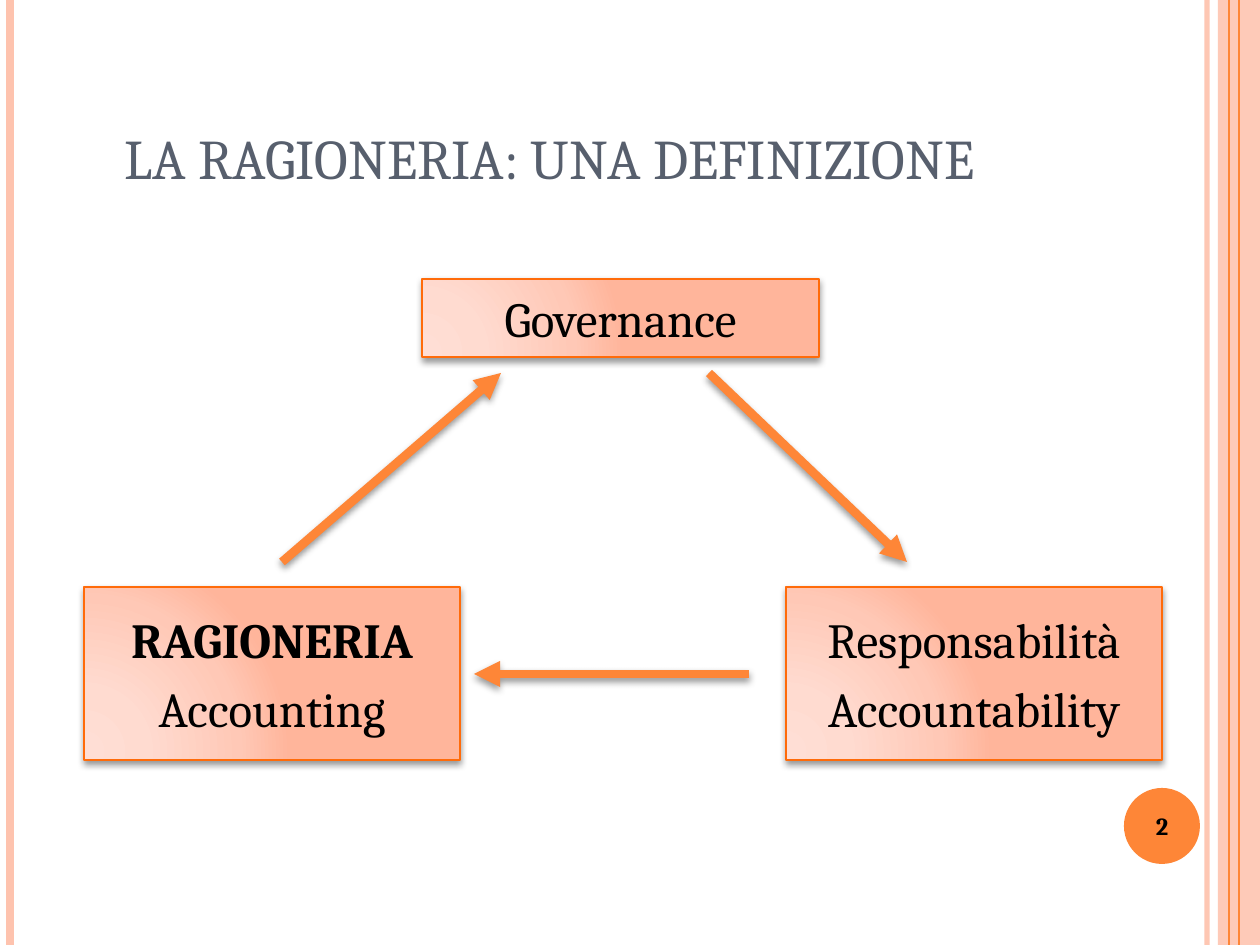
"""Build the slide "La ragioneria: una definizione" as a cycle of three boxes."""
from lxml.etree import SubElement
from pptx import Presentation
from pptx.dml.color import RGBColor
from pptx.enum.shapes import MSO_CONNECTOR, MSO_SHAPE
from pptx.enum.text import MSO_ANCHOR, MSO_AUTO_SIZE, PP_ALIGN
from pptx.oxml import parse_xml
from pptx.oxml.ns import nsdecls, qn
from pptx.util import Pt

WIDTH, HEIGHT = 1260, 945
EMU_PER_PX = 914400 / 126
FONT = "Cambria"
COLORS = {
    "orange": "FE8637", "peach": "FEC3AE", "border": "FF6B0A",
    "title": "575F6D", "text": "000000", "shadow": "000000",
}
GRADIENT = [(0, "FFDED5"), (30, "FFDBD0"), (75, "FFC8B6"), (100, "FFB59B")]

TITLE = ("LA RAGIONERIA: UNA DEFINIZIONE", (112, 102, 1103, 95))
PAGE_NUMBER = ("2", (1120, 790, 84, 72))
STRIPES = [
    (1207, "peach", 3, 93),
    (10, "peach", 4.5, 100),
    (1239, "orange", 1.5, 100),
    (1229, "orange", 0.75, 100),
]
BAND = (1218, 0, 42, HEIGHT)
BADGE = (1124, 788, 76, 76)
BOXES = [
    ((422, 279, 397, 78), [("Governance", False)]),
    ((84, 587, 376, 173), [("RAGIONERIA", True), ("Accounting", False)]),
    ((786, 587, 376, 173), [("Responsabilità", False), ("Accountability", False)]),
]
ARROWS = [
    ((709, 373), (907, 562)),
    ((749, 674), (474, 674)),
    ((282, 562), (501, 373)),
]


def px(*values):
    return [round(value * EMU_PER_PX) for value in values]


def paint(color_format, name, opacity=100):
    color_format.fore_color.rgb = RGBColor.from_string(COLORS[name])
    if opacity < 100:
        color = color_format._xPr.find(".//" + qn("a:srgbClr"))
        SubElement(color, qn("a:alpha"), val=str(opacity * 1000))


def write(paragraph, text, size=28, color="text", bold=False,
          align=PP_ALIGN.CENTER, space_before=0):
    paragraph.alignment = align
    paragraph.space_before = Pt(space_before)
    run = paragraph.add_run()
    run.text = text
    run.font.name = FONT
    run.font.size = Pt(size)
    run.font.bold = bold
    run.font.color.rgb = RGBColor.from_string(COLORS[color])


def add_effects(shape, shadow=False):
    properties = shape._element.spPr
    effects = SubElement(properties, qn("a:effectLst"))
    if shadow:
        outer = SubElement(effects, qn("a:outerShdw"), blurRad=str(Pt(4)),
                           dist=str(Pt(2)), dir="5400000", rotWithShape="0")
        color = SubElement(outer, qn("a:srgbClr"), val=COLORS["shadow"])
        SubElement(color, qn("a:alpha"), val="40000")


def add_line(slide, start, end, color, width, opacity=100, arrow=False):
    line = slide.shapes.add_connector(MSO_CONNECTOR.STRAIGHT, *px(*start, *end))
    line.line.width = Pt(width)
    line.line.fill.solid()
    paint(line.line.fill, color, opacity)
    if arrow:
        SubElement(line.line._get_or_add_ln(), qn("a:tailEnd"), type="triangle")
    add_effects(line, shadow=arrow)


def add_plain_shape(slide, kind, place, color, opacity=100):
    shape = slide.shapes.add_shape(kind, *px(*place))
    shape.fill.solid()
    paint(shape.fill, color, opacity)
    shape.line.fill.background()
    shape.shadow.inherit = False


def add_box(slide, place, lines):
    box = slide.shapes.add_shape(MSO_SHAPE.RECTANGLE, *px(*place))
    stops = "".join(
        f'<a:gs pos="{position * 1000}"><a:srgbClr val="{color}"/></a:gs>'
        for position, color in GRADIENT)
    box._element.spPr.find(qn("a:prstGeom")).addnext(parse_xml(
        f'<a:gradFill {nsdecls("a")} rotWithShape="1"><a:gsLst>{stops}</a:gsLst>'
        '<a:path path="circle"><a:fillToRect l="5000" t="100000" r="120000" '
        'b="10000"/></a:path></a:gradFill>'))
    box.line.width = Pt(1)
    box.line.fill.solid()
    paint(box.line.fill, "border")
    add_effects(box, shadow=True)
    frame = box.text_frame
    frame.word_wrap = False
    frame.vertical_anchor = MSO_ANCHOR.MIDDLE
    for index, (text, bold) in enumerate(lines):
        paragraph = frame.add_paragraph() if index else frame.paragraphs[0]
        write(paragraph, text, bold=bold, space_before=5.6 if index else 0)


def add_title(slide):
    text, place = TITLE
    title = slide.shapes.title
    title.left, title.top, title.width, title.height = px(*place)
    frame = title.text_frame
    frame.word_wrap = True
    frame.auto_size = MSO_AUTO_SIZE.NONE
    frame.vertical_anchor = MSO_ANCHOR.BOTTOM
    write(frame.paragraphs[0], text, size=32, color="title", align=PP_ALIGN.LEFT)


def add_page_number(slide):
    text, place = PAGE_NUMBER
    frame = slide.shapes.add_textbox(*px(*place)).text_frame
    frame.word_wrap = True
    frame.vertical_anchor = MSO_ANCHOR.MIDDLE
    write(frame.paragraphs[0], text, size=14, bold=True)


def main():
    presentation = Presentation()
    presentation.slide_width, presentation.slide_height = px(WIDTH, HEIGHT)
    slide = presentation.slides.add_slide(presentation.slide_layouts[5])
    add_title(slide)
    add_plain_shape(slide, MSO_SHAPE.RECTANGLE, BAND, "peach", opacity=87)
    for x, color, width, opacity in STRIPES:
        add_line(slide, (x, 0), (x, HEIGHT), color, width, opacity)
    add_plain_shape(slide, MSO_SHAPE.OVAL, BADGE, "orange")
    add_page_number(slide)
    for place, lines in BOXES:
        add_box(slide, place, lines)
    for start, end in ARROWS:
        add_line(slide, start, end, "orange", 5, arrow=True)
    presentation.save("out.pptx")


if __name__ == "__main__":
    main()
